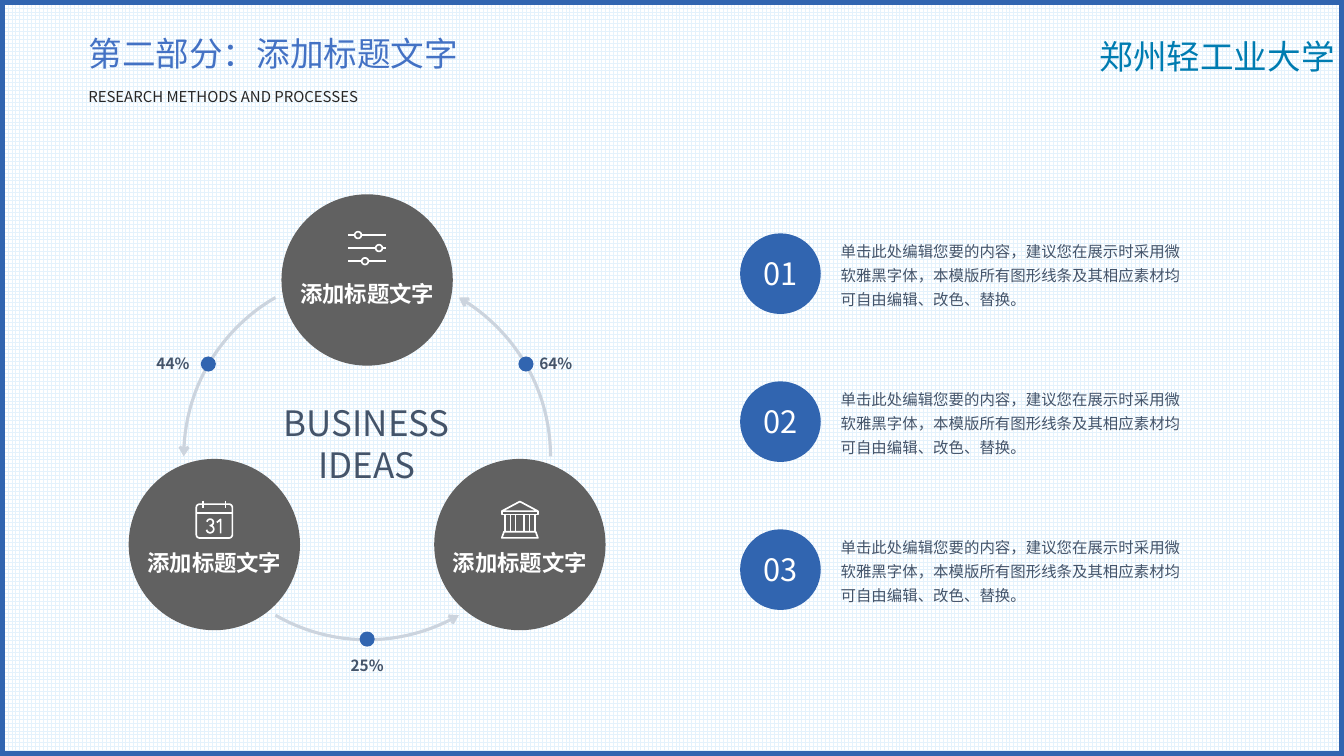
from math import cos, radians, sin

from lxml.etree import SubElement
from pptx import Presentation
from pptx.dml.color import RGBColor
from pptx.enum.dml import MSO_PATTERN_TYPE as Pattern
from pptx.enum.shapes import MSO_SHAPE as Shape
from pptx.enum.text import MSO_ANCHOR as Anchor, MSO_AUTO_SIZE as Fit, PP_ALIGN as Align
from pptx.oxml.ns import qn
from pptx.util import Pt

FONT = "Noto Sans CJK SC"
BLUE, GREY, SLATE, PALE, WHITE = "3165B0", "616161", "44546A", "CCD4DE", "FFFFFF"
MID_X, MID_Y = 262.25, 326  # centre of the cycle
ADVICE = ("单击此处编辑您要的内容，建议您在展示时采用微软雅黑字体，"
          "本模版所有图形线条及其相应素材均可自由编辑、改色、替换。")


def color(code):
    return RGBColor.from_string(code)


def place(item, x, y, w, h):
    item.left, item.top, item.width, item.height = Pt(x), Pt(y), Pt(w), Pt(h)


def write(item, text, size, ink, align=Align.LEFT, bold=False,
          inset=(0, 0), space=None, anchor=Anchor.TOP):
    frame = item.text_frame
    frame.text = text
    frame.word_wrap, frame.auto_size = True, Fit.NONE
    frame.vertical_anchor = anchor
    frame.margin_left, frame.margin_right = Pt(inset[0]), Pt(0)
    frame.margin_top = frame.margin_bottom = Pt(inset[1])
    for para in frame.paragraphs:
        para.alignment = align
        if space:
            para.line_spacing = space
        for run in para.runs:
            font = run.font
            font.size, font.bold, font.name = Pt(size), bold, FONT
            font.color.rgb = color(ink)
            SubElement(font._element, qn("a:ea"), typeface=FONT)


def label(slide, box, text, size, ink, **style):
    item = slide.shapes.add_textbox(*map(Pt, box))
    write(item, text, size, ink, **style)


def disk(slide, x, y, width, fill):
    item = slide.shapes.add_shape(Shape.OVAL, Pt(x - width / 2), Pt(y - width / 2),
                                  Pt(width), Pt(width))
    item.shadow.inherit = False
    item.fill.solid()
    item.fill.fore_color.rgb = color(fill)
    item.line.fill.background()
    return item


def polar(x, y, radius, angle):
    turn = radians(angle)
    return x + radius * cos(turn), y - radius * sin(turn)


def arc(x, y, radius, start, end, steps=12):
    return [polar(x, y, radius, start + (end - start) * i / steps)
            for i in range(steps + 1)]


def stroke(slide, lines, ink, width, x=0, y=0):
    """Draw several point lists, in points, as one unfilled outline."""
    pen = None
    for line in lines:
        dots = [((x + a) * 100, (y + b) * 100) for a, b in line]
        if pen is None:
            pen = slide.shapes.build_freeform(*dots[0], scale=Pt(1) / 100)
        else:
            pen.move_to(*dots[0])
        pen.add_line_segments(dots[1:], close=line[0] == line[-1])
    item = pen.convert_to_shape()
    item.shadow.inherit = False
    item.fill.background()
    item.line.color.rgb = color(ink)
    item.line.width = Pt(width)
    return item


def arrow(slide, start):
    item = stroke(slide, [arc(MID_X, MID_Y, 131, start, start + 60, 24)], PALE, 2.25)
    SubElement(item._element.spPr.find(qn("a:ln")), qn("a:tailEnd"), type="arrow")


# Icons, each 27 points wide
def sliders():
    lines = []
    for x, y in ((7, 2.9), (22, 12.2), (12, 21.6)):
        ring = arc(x, y, 2.4, 0, 360)
        ring[-1] = ring[0]
        lines += [[(0, y), (x - 2.4, y)], ring, [(x + 2.4, y), (27, y)]]
    return lines


def calendar():
    frame = (arc(3, 5, 2.4, 180, 90, 4) + arc(24, 5, 2.4, 90, 0, 4)
             + arc(24, 24.4, 2.4, 0, -90, 4) + arc(3, 24.4, 2.4, -90, -180, 4))
    three = arc(10.5, 15.6, 2.3, 170, -90) + arc(10.5, 20.5, 2.6, 90, -170)
    one = [(15.3, 15.7), (18, 13.5), (18, 23.5)]
    rings = [[(x, 0), (x, 5.4)] for x in (5.4, 21.6)]
    return [frame + frame[:1], [(0.6, 9), (26.4, 9)], three, one] + rings


def bank():
    roof = [(0.6, 7.6), (13.5, 0.7), (26.4, 7.6), (0.6, 7.6)]
    beam = [(0.6, 7.6), (0.6, 10.1), (26.4, 10.1), (26.4, 7.6)]
    base = [(2.2, 22.3), (24.8, 22.3), (26.4, 26.7), (0.6, 26.7), (2.2, 22.3)]
    posts = [[(x, 10.1), (x, 22.3)] for x in (2.9, 6.7, 10.3, 16.7, 20.3, 24.1)]
    return [roof, beam, base] + posts


def topic(slide, angle, drop, icon):
    x, y = polar(MID_X, MID_Y, 126, angle)
    disk(slide, x, y, 122.4, GREY)
    stroke(slide, icon, WHITE, 1.2, x - 13.5, y - 35 + drop)
    label(slide, (x - 52, y + drop, 104, 19.4), "添加标题文字", 16, WHITE,
          align=Align.CENTER, bold=True)


def share(slide, angle, text, x, y, align):
    disk(slide, *polar(MID_X, MID_Y - 0.5, 131, angle), 10.8, BLUE)
    label(slide, (x, y, 70.6, 13.7), text, 11, SLATE, align=align, bold=True)


def point(slide, index):
    y = 195.5 + 105.7 * index
    badge = disk(slide, 557.5, y, 57.6, BLUE)
    write(badge, f"{index + 1:02}", 22, WHITE, align=Align.CENTER, anchor=Anchor.MIDDLE)
    label(slide, (600.5, y - 26.3, 244, 50.4), ADVICE, 11, SLATE, space=1.3)


def main():
    deck = Presentation()
    deck.slide_width, deck.slide_height = Pt(960), Pt(540)
    slide = deck.slides.add_slide(deck.slide_layouts[5])

    # Background grid and border
    back = slide.background.fill
    back.patterned()
    back.pattern = Pattern.LARGE_GRID
    back.fore_color.rgb, back.back_color.rgb = color("E4F2FC"), color(WHITE)
    edge = slide.shapes.add_shape(Shape.RECTANGLE, 0, 0, Pt(960), Pt(540))
    edge.shadow.inherit = False
    edge.fill.background()
    edge.line.color.rgb, edge.line.width = color(BLUE), Pt(6.75)

    # Heading
    title = slide.shapes.title
    place(title, 56, 20, 300, 36)
    write(title, "第二部分：添加标题文字", 24, "4472C4", inset=(7.2, 3.6))
    label(slide, (56, 59, 260, 20), "RESEARCH METHODS AND PROCESSES", 10.7, "262626",
          inset=(7.2, 3.6))
    label(slide, (778.3, 22.3, 180, 36), "郑州轻工业大学", 24, "007CB1", inset=(7.2, 3.6))

    # Cycle
    for start in (120, 240, 0):
        arrow(slide, start)
    topic(slide, 90, 0, sliders())
    topic(slide, 210, 3.5, calendar())
    topic(slide, 330, 3.5, bank())
    label(slide, (184, 286.6, 156, 60.5), "BUSINESS\nIDEAS", 25, SLATE, align=Align.CENTER)
    share(slide, 150, "44%", 64.8, 252.7, Align.RIGHT)
    share(slide, 270, "25%", 227, 468.7, Align.CENTER)
    share(slide, 30, "64%", 385.2, 252.7, Align.LEFT)

    # Numbered points
    for index in range(3):
        point(slide, index)

    deck.save("out.pptx")


if __name__ == "__main__":
    main()
